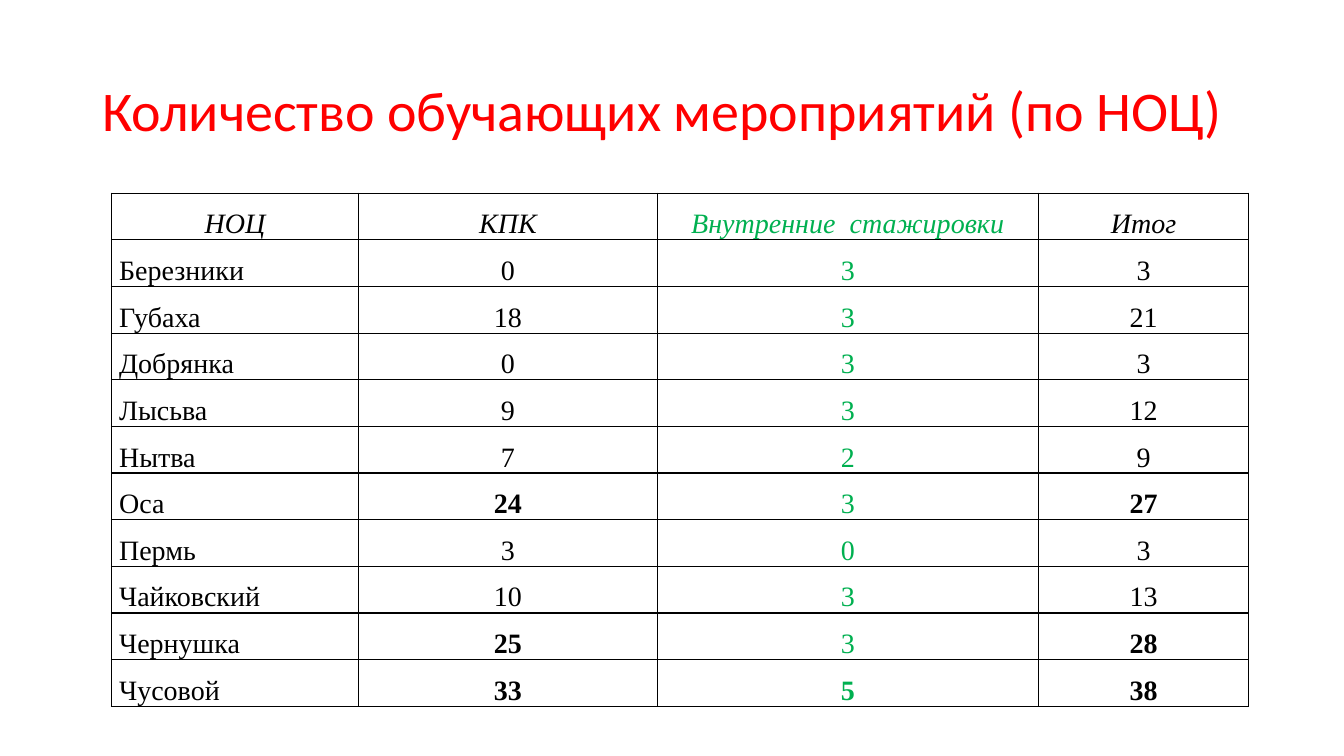
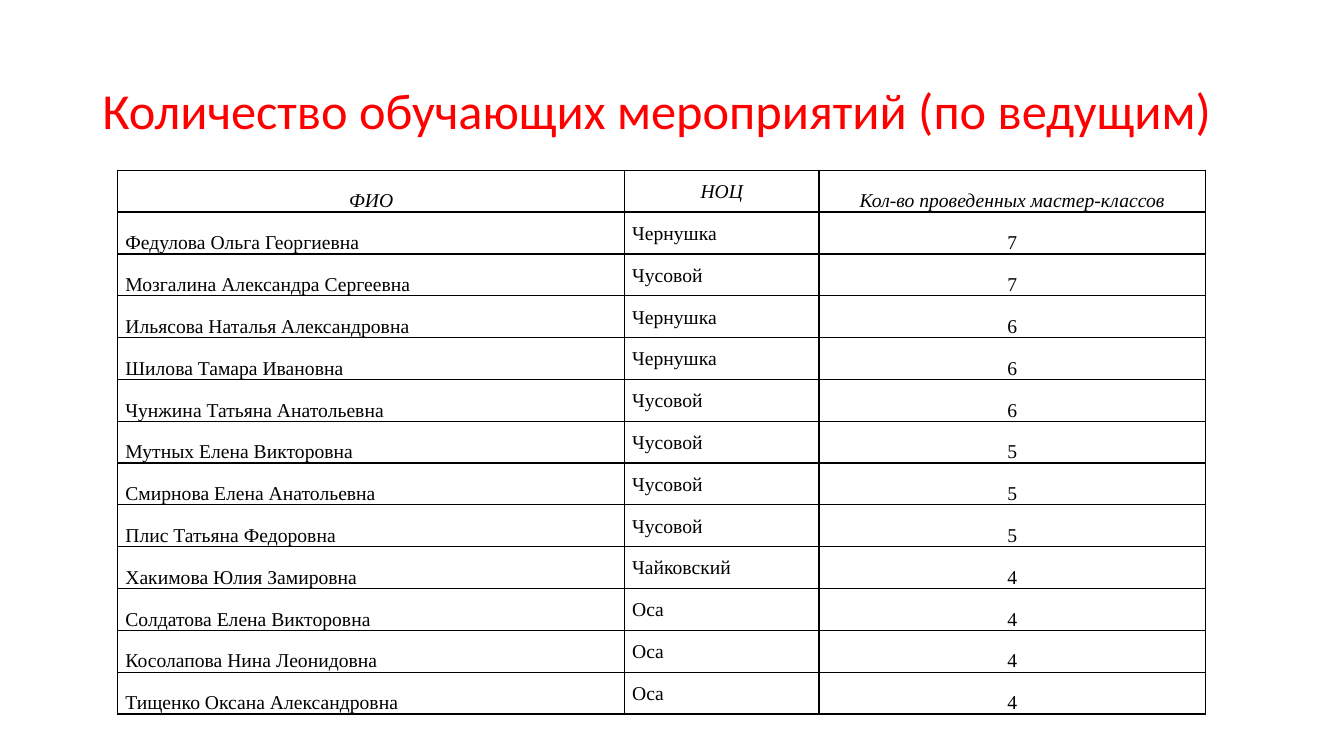
from dataclasses import dataclass

from lxml import etree
from pptx import Presentation
from pptx.dml.color import RGBColor
from pptx.enum.text import MSO_ANCHOR, PP_ALIGN
from pptx.oxml.ns import qn
from pptx.util import Cm, Pt

TOP, MIDDLE, BOTTOM = MSO_ANCHOR.TOP, MSO_ANCHOR.MIDDLE, MSO_ANCHOR.BOTTOM
LEFT, CENTER, JUSTIFY = PP_ALIGN.LEFT, PP_ALIGN.CENTER, PP_ALIGN.JUSTIFY


@dataclass(frozen=True)
class Theme:
    title_color: str = "FF0000"
    ink: str = "000000"
    accent: str = "00B050"
    title_font: str = "Calibri"
    table_font: str = "Times New Roman"
    centers_title_size: int = 40
    leaders_title_size: int = 36
    centers_table_size: int = 20
    leaders_table_size: int = 14
    title_spacing: float = 0.9
    centers_spacing: float = 1.35
    leaders_spacing: float = 1.5
    border_width: int = 1


@dataclass(frozen=True)
class Column:
    header: str
    width: float
    align: PP_ALIGN = CENTER
    anchor: MSO_ANCHOR = BOTTOM
    color: str = Theme.ink
    bold_from: float = float("inf")  # numbers from this value up are bold


THEME = Theme()

CENTER_COLUMNS = [
    Column("НОЦ", 6.23, align=LEFT),
    Column("КПК", 7.52, bold_from=24),
    Column("Внутренние  стажировки", 9.61, color=THEME.accent, bold_from=5),
    Column("Итог", 5.3, bold_from=27),
]
CENTERS = [
    ("Березники", 0, 3),
    ("Губаха", 18, 3),
    ("Добрянка", 0, 3),
    ("Лысьва", 9, 3),
    ("Нытва", 7, 2),
    ("Оса", 24, 3),
    ("Пермь", 3, 0),
    ("Чайковский", 10, 3),
    ("Чернушка", 25, 3),
    ("Чусовой", 33, 5),
]
CENTER_ROWS = [(name, courses, visits, courses + visits) for name, courses, visits in CENTERS]

LEADER_COLUMNS = [
    Column("ФИО", 12.77, align=LEFT),
    Column("НОЦ", 4.9, align=JUSTIFY, anchor=TOP),
    Column("Кол-во проведенных мастер-классов", 9.74),
]
LEADER_ROWS = [
    ("Федулова Ольга Георгиевна", "Чернушка", 7),
    ("Мозгалина Александра Сергеевна", "Чусовой", 7),
    ("Ильясова Наталья Александровна", "Чернушка", 6),
    ("Шилова Тамара Ивановна", "Чернушка", 6),
    ("Чунжина Татьяна Анатольевна", "Чусовой", 6),
    ("Мутных Елена Викторовна", "Чусовой", 5),
    ("Смирнова Елена Анатольевна", "Чусовой", 5),
    ("Плис Татьяна Федоровна", "Чусовой", 5),
    ("Хакимова Юлия Замировна", "Чайковский", 4),
    ("Солдатова Елена Викторовна", "Оса", 4),
    ("Косолапова Нина Леонидовна", "Оса", 4),
    ("Тищенко Оксана Александровна", "Оса", 4),
]

# title, title size, columns, rows, table left, top and height, table text size and spacing
PAGES = [
    ("Количество обучающих мероприятий (по НОЦ)", THEME.centers_title_size,
     CENTER_COLUMNS, CENTER_ROWS, 2.81, 4.87, 12.93,
     THEME.centers_table_size, THEME.centers_spacing),
    ("Количество обучающих мероприятий (по ведущим)", THEME.leaders_title_size,
     LEADER_COLUMNS, LEADER_ROWS, 2.97, 4.29, 13.71,
     THEME.leaders_table_size, THEME.leaders_spacing),
]


def write(frame, text, font_name, size, color, align, spacing):
    """Fill the frame's first paragraph and return its font."""
    para = frame.paragraphs[0]
    para.text = text
    para.alignment = align
    para.line_spacing = spacing
    para.font.name = font_name
    para.font.size = Pt(size)
    para.font.color.rgb = RGBColor.from_string(color)
    return para.font


def add_borders(cell):
    properties = cell._tc.get_or_add_tcPr()
    for side in ("lnL", "lnR", "lnT", "lnB"):
        line = etree.SubElement(properties, qn(f"a:{side}"), w=str(Pt(THEME.border_width)))
        fill = etree.SubElement(line, qn("a:solidFill"))
        etree.SubElement(fill, qn("a:srgbClr"), val=THEME.ink)


deck = Presentation()
deck.slide_width, deck.slide_height = Cm(33.87), Cm(19.05)
blank_layout = deck.slide_layouts[6]

for title, title_size, columns, rows, left, top, height, text_size, spacing in PAGES:
    page = deck.slides.add_slide(blank_layout)

    title_box = page.shapes.add_textbox(Cm(2.33), Cm(1.01), Cm(29.21), Cm(3.68))
    title_box.text_frame.word_wrap = True
    title_box.text_frame.vertical_anchor = MIDDLE
    write(title_box.text_frame, title, THEME.title_font, title_size,
          THEME.title_color, LEFT, THEME.title_spacing)

    lines = [[column.header for column in columns], *rows]
    table_width = sum(column.width for column in columns)
    table = page.shapes.add_table(len(lines), len(columns), Cm(left), Cm(top),
                                  Cm(table_width), Cm(height)).table
    table.first_row = table.horz_banding = False
    for index, column in enumerate(columns):
        table.columns[index].width = Cm(column.width)

    for row_index, values in enumerate(lines):
        table.rows[row_index].height = Cm(height / len(lines))
        is_header = row_index == 0
        for column_index, (column, value) in enumerate(zip(columns, values)):
            cell = table.cell(row_index, column_index)
            cell.margin_left = cell.margin_right = Cm(0.19)
            cell.margin_top = cell.margin_bottom = Cm(0)
            cell.vertical_anchor = column.anchor
            add_borders(cell)
            cell.fill.background()
            font = write(cell.text_frame, str(value), THEME.table_font, text_size,
                         column.color, CENTER if is_header else column.align, spacing)
            font.italic = is_header
            font.bold = isinstance(value, int) and value >= column.bold_from

deck.save("out.pptx")
